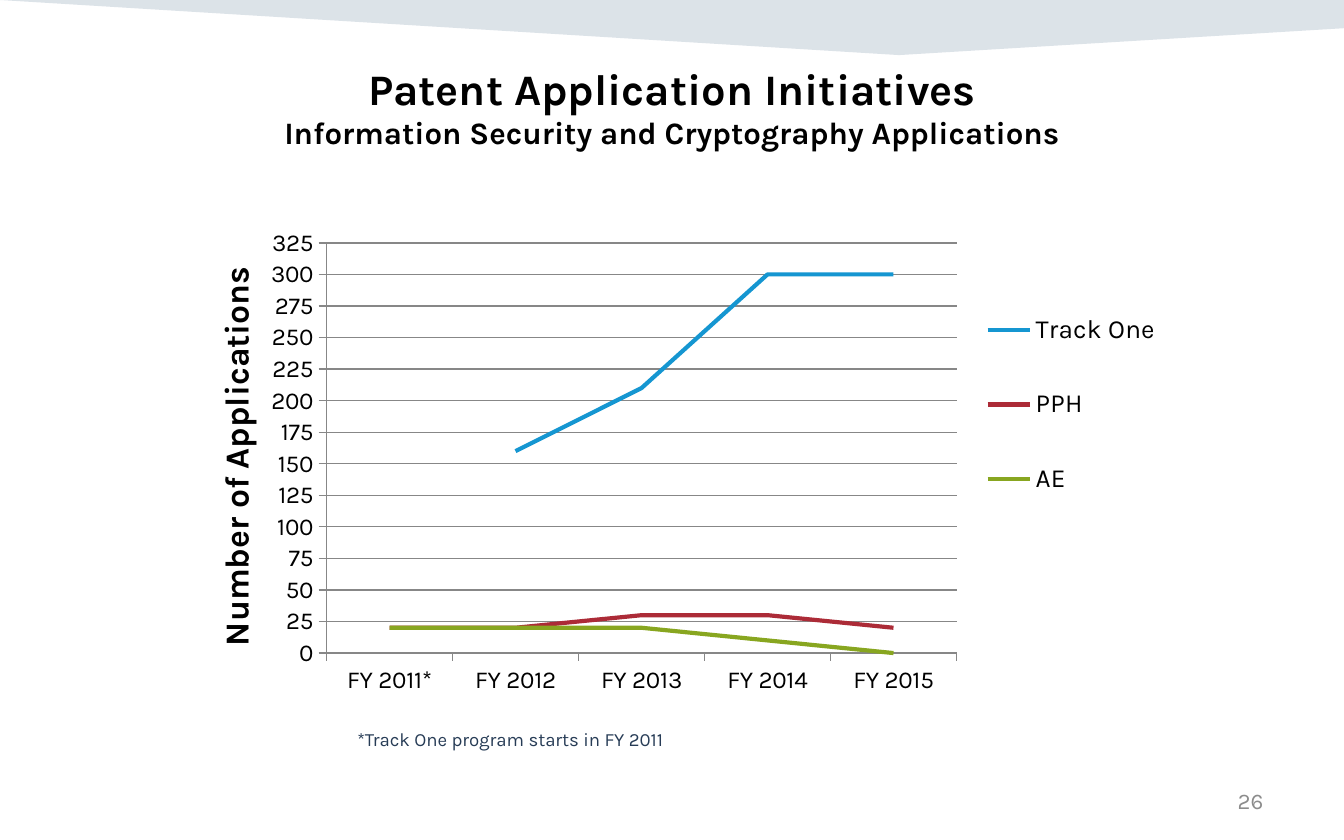
"""Build the patent application initiatives slide with its line chart."""
from dataclasses import dataclass

from lxml import etree
from pptx import Presentation
from pptx.chart.data import CategoryChartData
from pptx.dml.color import RGBColor
from pptx.enum.chart import XL_CHART_TYPE, XL_LEGEND_POSITION, XL_MARKER_STYLE, XL_TICK_MARK
from pptx.enum.text import MSO_ANCHOR, PP_ALIGN
from pptx.oxml.ns import qn
from pptx.util import Inches, Pt

LINE_CHART = XL_CHART_TYPE.LINE
LEGEND_RIGHT = XL_LEGEND_POSITION.RIGHT
NO_MARKER = XL_MARKER_STYLE.NONE
TICK_OUTSIDE, TICK_NONE = XL_TICK_MARK.OUTSIDE, XL_TICK_MARK.NONE
LEFT, CENTER, RIGHT = PP_ALIGN.LEFT, PP_ALIGN.CENTER, PP_ALIGN.RIGHT
TOP, MIDDLE = MSO_ANCHOR.TOP, MSO_ANCHOR.MIDDLE

WIDTH, HEIGHT = 10, 6.25
FONT = "Karla"
COLORS = {
    "band": "164469",
    "black": "000000",
    "note": "273C56",
    "page": "8C8C8C",
    "grid": "878787",
    "blue": "1596D1",
    "red": "AC2B37",
    "green": "88A620",
}
CATEGORIES = ["FY 2011*", "FY 2012", "FY 2013", "FY 2014", "FY 2015"]


@dataclass(frozen=True)
class Box:
    """Hold a rectangle as left, top, width and height."""
    left: float
    top: float
    width: float = 0
    height: float = 0

    def inches(self) -> list:
        return [Inches(n) for n in (self.left, self.top, self.width, self.height)]


@dataclass(frozen=True)
class Series:
    """Hold one line of the chart."""
    name: str
    values: tuple
    color: str


SERIES = [
    Series("Track One", (None, 160, 210, 300, 300), "blue"),
    Series("PPH", (20, 20, 30, 30, 20), "red"),
    Series("AE", (20, 20, 20, 10, 0), "green"),
]


def rgb(name: str) -> RGBColor:
    return RGBColor.from_string(COLORS[name])


def style_font(font, size: float, color: str = "black", bold: bool = False) -> None:
    font.name, font.size, font.bold = FONT, Pt(size), bold
    font.color.rgb = rgb(color)


def add_text(slide, text: str, box: Box, *, sizes: tuple, color: str = "black",
             bold: bool = False, align=LEFT, anchor=TOP, wrap: bool = True) -> None:
    """Add a text box whose lines take the given sizes in turn."""
    frame = slide.shapes.add_textbox(*box.inches()).text_frame
    frame.word_wrap, frame.vertical_anchor = wrap, anchor
    paragraph = frame.paragraphs[0]
    paragraph.alignment = align
    for index, (line, size) in enumerate(zip(text.split("\n"), sizes)):
        if index:
            paragraph.add_line_break()
        run = paragraph.add_run()
        run.text = line
        style_font(run.font, size, color, bold)


def add_band(slide) -> None:
    """Draw the pale angled band along the top edge."""
    corners = [(WIDTH, 0), (WIDTH, 0.21), (6.69, 0.41)]
    builder = slide.shapes.build_freeform(0, 0)
    builder.add_line_segments([(Inches(x), Inches(y)) for x, y in corners], close=True)
    band = builder.convert_to_shape()
    band.shadow.inherit = False
    band.line.fill.background()
    band.fill.solid()
    band.fill.fore_color.rgb = rgb("band")
    color = band.fill._xPr.find(qn("a:solidFill"))[0]
    etree.SubElement(color, qn("a:alpha")).set("val", "15000")


def set_layout(parent, index: int, box: Box, inner: bool = False) -> None:
    """Place a chart part by shares of the chart's size."""
    for old in parent.findall(qn("c:layout")):
        parent.remove(old)
    layout = etree.Element(qn("c:layout"))
    manual = etree.SubElement(layout, qn("c:manualLayout"))
    settings = [("layoutTarget", "inner")] if inner else []
    settings += [("xMode", "edge"), ("yMode", "edge"), ("x", box.left), ("y", box.top)]
    if box.width:
        settings += [("w", box.width), ("h", box.height)]
    for tag, value in settings:
        etree.SubElement(manual, qn(f"c:{tag}")).set("val", str(value))
    parent.insert(index, layout)


def style_line(line, color: str, width: float) -> None:
    line.color.rgb = rgb(color)
    line.width = Pt(width)


def style_axis(axis) -> None:
    axis.major_tick_mark, axis.minor_tick_mark = TICK_OUTSIDE, TICK_NONE
    style_font(axis.tick_labels.font, 13)
    style_line(axis.format.line, "grid", 0.75)


def add_line_chart(slide, box: Box) -> None:
    """Add the chart of applications by fiscal year."""
    data = CategoryChartData()
    data.categories = CATEGORIES
    for series in SERIES:
        data.add_series(series.name, series.values)
    chart = slide.shapes.add_chart(LINE_CHART, *box.inches(), data).chart
    style_font(chart.font, 18)
    chart.has_title = False

    plot = chart.plots[0]
    plot.vary_by_categories = False
    for line, series in zip(plot.series, SERIES):
        line.smooth = False
        line.marker.style = NO_MARKER
        style_line(line.format.line, series.color, 2.25)

    value_axis = chart.value_axis
    for axis in (chart.category_axis, value_axis):
        style_axis(axis)
    value_axis.minimum_scale, value_axis.maximum_scale = 0, 325
    value_axis.major_unit = 25
    value_axis.tick_labels.number_format = "#,##0"
    value_axis.tick_labels.number_format_is_linked = False
    value_axis.has_major_gridlines = True
    style_line(value_axis.major_gridlines.format.line, "grid", 0.75)
    title = value_axis.axis_title
    title.text_frame.text = "Number of Applications"
    style_font(title.text_frame.paragraphs[0].runs[0].font, 18, bold=True)
    set_layout(title._element, 1, Box(0.03, 0.11))

    chart.has_legend = True
    legend = chart.legend
    legend.position, legend.include_in_layout = LEGEND_RIGHT, False
    style_font(legend.font, 14)
    set_layout(legend._element, 1, Box(0.787, 0.13, 0.2, 0.54))
    plot_area = chart._chartSpace.chart.plotArea
    set_layout(plot_area, 0, Box(0.148, 0.075, 0.625, 0.825), inner=True)


def main() -> None:
    presentation = Presentation()
    presentation.slide_width, presentation.slide_height = Inches(WIDTH), Inches(HEIGHT)
    slide = presentation.slides.add_slide(presentation.slide_layouts[6])
    add_band(slide)
    add_text(slide, "Patent Application Initiatives\n"
             "Information Security and Cryptography Applications",
             Box(0.05 * WIDTH, 0.41, 0.9 * WIDTH, 0.97),
             sizes=(23.3, 16.7), bold=True, align=CENTER)
    add_text(slide, "*Track One program starts in FY 2011", Box(2.56, 5.37, 2.51, 0.27),
             sizes=(10,), color="note", wrap=False)
    add_line_chart(slide, Box(1.32, 1.53, 0.75 * WIDTH, 3.7))
    add_text(slide, "26", Box(7.17, 5.79, 2.33, 0.33), sizes=(12,), color="page",
             align=RIGHT, anchor=MIDDLE)
    presentation.save("out.pptx")


if __name__ == "__main__":
    main()
